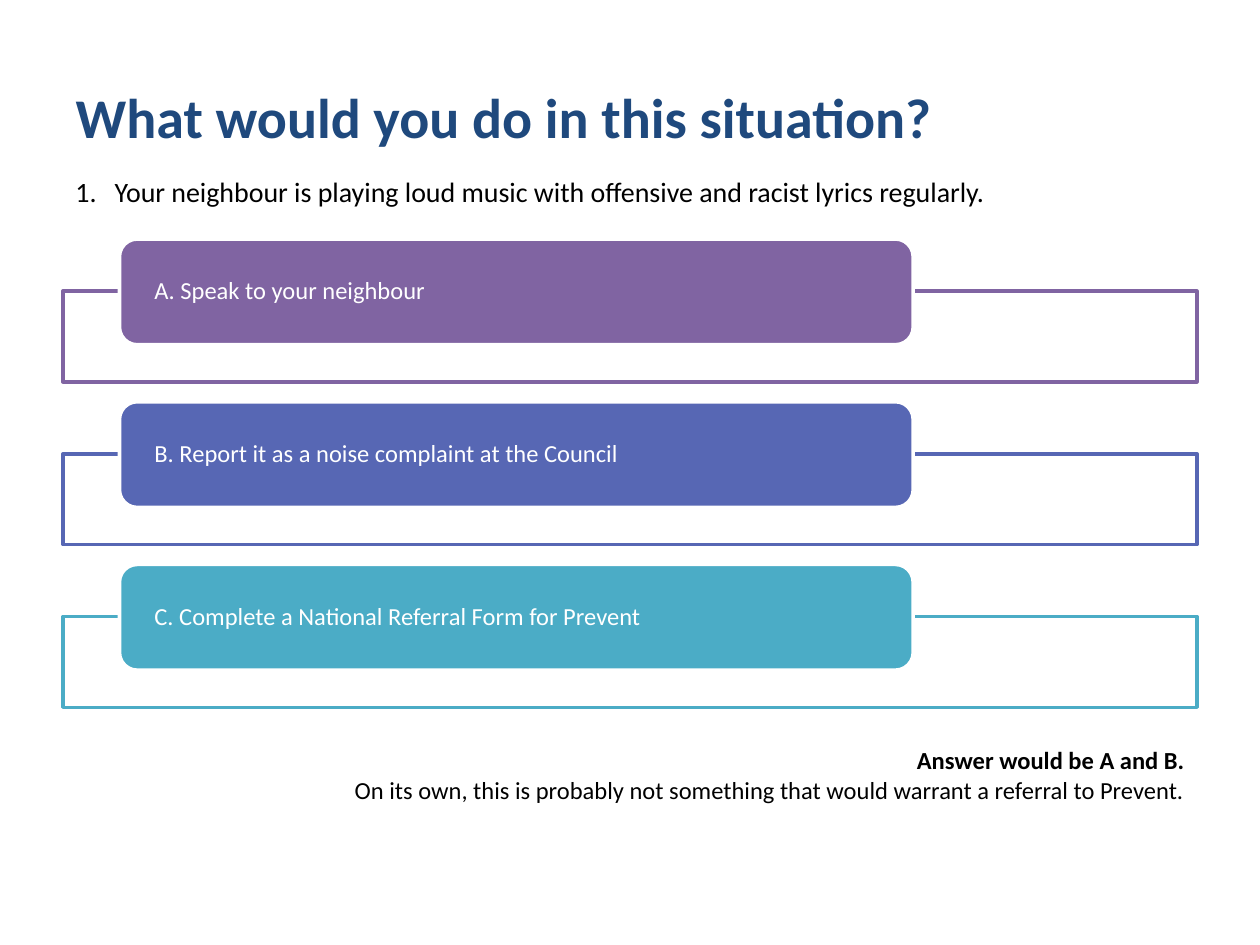
import pptx
import pptx.util
import pptx.dml.color
import pptx.enum.shapes
import pptx.enum.text
from lxml import etree

Cm, Pt = pptx.util.Cm, pptx.util.Pt
RGB = pptx.dml.color.RGBColor.from_string
KIND = pptx.enum.shapes.MSO_SHAPE
ALIGN = pptx.enum.text.PP_ALIGN
MID = pptx.enum.text.MSO_ANCHOR.MIDDLE

cols = {"title": "1F497D", "text": "000000", "white": "FFFFFF",
        "A": "8064A2", "B": "5767B4", "C": "4BACC6"}
left, wide = Cm(1.27), Cm(22.86)


def style(para, size, col, bold=False, align=ALIGN.LEFT):
    para.alignment = align
    for run in para.runs:
        font = run.font
        font.name, font.size, font.bold = "Calibri", Pt(size), bold
        font.color.rgb = RGB(cols[col])


def block(kind, x, y, w, h, fill, line):
    shape = slide.shapes.add_shape(kind, x, y, w, h)
    shape.shadow.inherit = False
    shape.fill.solid()
    shape.fill.fore_color.rgb = RGB(cols[fill])
    shape.line.color.rgb = RGB(cols[line])
    shape.line.width = Pt(2)
    return shape


deck = pptx.Presentation()
deck.slide_width, deck.slide_height = Cm(25.4), Cm(19.05)
slide = deck.slides.add_slide(deck.slide_layouts[5])

# Title
title = slide.shapes.title
title.left, title.top, title.width, title.height = left, Cm(0.76), wide, Cm(3.18)
title.text_frame.text = "What would you do in this situation?"
title.text_frame.vertical_anchor = MID
style(title.text_frame.paragraphs[0], 32, "title", True)

# Choices: a frame with a label over its top edge
choices = [("A", "Speak to your neighbour"),
           ("B", "Report it as a noise complaint at the Council"),
           ("C", "Complete a National Referral Form for Prevent")]
for i, (key, words) in enumerate(choices):
    top = Cm(4.82 + 3.28 * i)
    block(KIND.RECTANGLE, left, top + Cm(1.05), wide, Cm(1.83), "white", key)
    label = block(KIND.ROUNDED_RECTANGLE, Cm(2.41), top, Cm(16), Cm(2.13), key, "white")
    frame = label.text_frame
    frame.text = f"{key}. {words}"
    frame.word_wrap = True
    frame.vertical_anchor = MID
    frame.margin_left = frame.margin_right = Cm(0.6)
    frame.margin_top = frame.margin_bottom = 0
    style(frame.paragraphs[0], 14, "white")
    frame.paragraphs[0].line_spacing = 0.9

# Numbered question
frame = slide.shapes.add_textbox(left, Cm(3.4), wide, Cm(0.94)).text_frame
frame.word_wrap = True
frame.text = "Your neighbour is playing loud music with offensive and racist lyrics regularly."
para = frame.paragraphs[0]
props = para._p.get_or_add_pPr()
props.set("marL", str(Cm(0.79)))
props.set("indent", str(-Cm(0.79)))
num = etree.SubElement(props, pptx.oxml.ns.qn("a:buAutoNum"))
num.set("type", "arabicPeriod")
style(para, 16, "text")

# Answer
frame = slide.shapes.add_textbox(left, Cm(14.9), wide, Cm(1.45)).text_frame
frame.word_wrap = True
frame.text = ("Answer would be A and B.\n"
              "On its own, this is probably not something that would warrant a referral to Prevent.")
for para, bold in zip(frame.paragraphs, (True, False)):
    style(para, 14, "text", bold, ALIGN.RIGHT)

deck.save("out.pptx")
